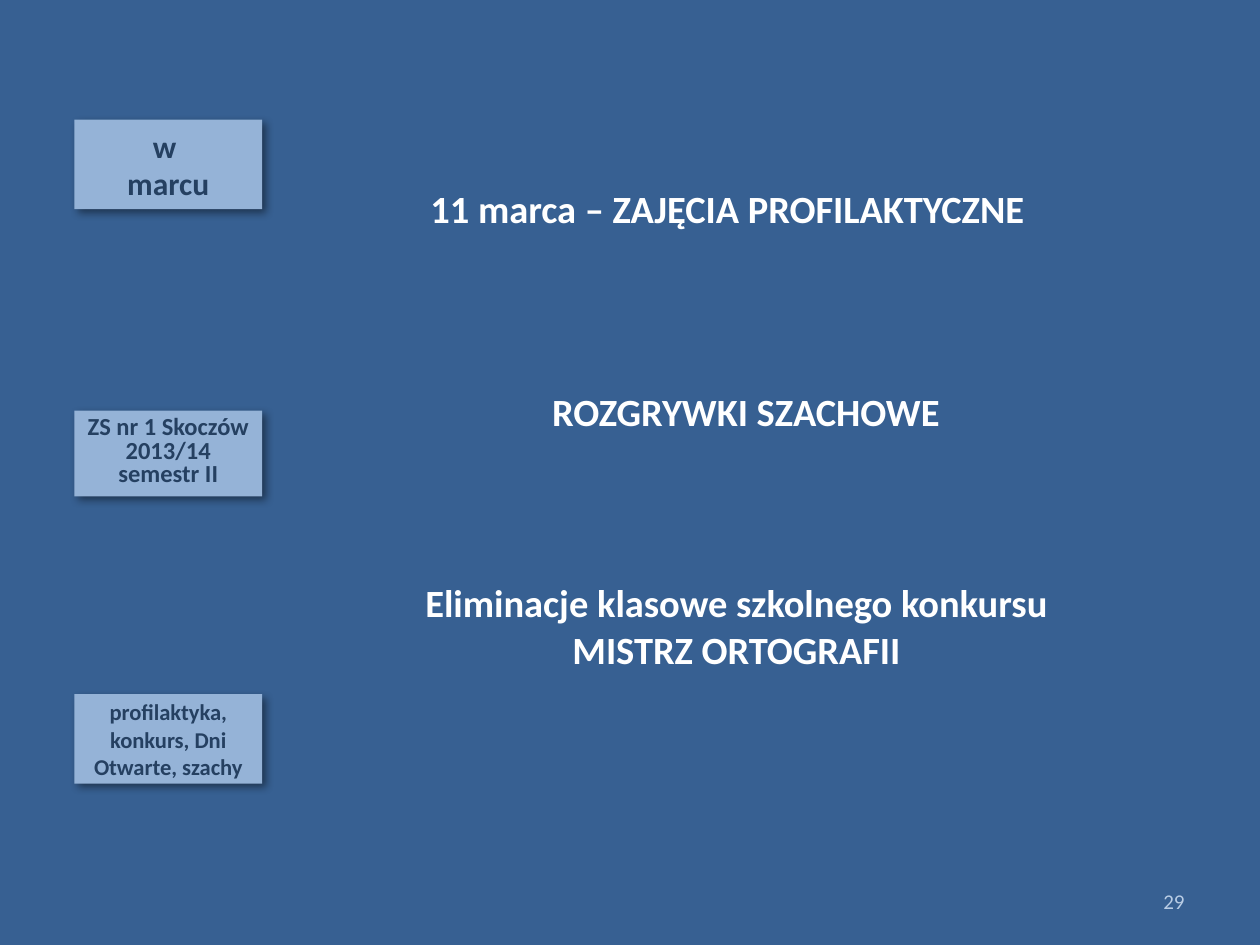
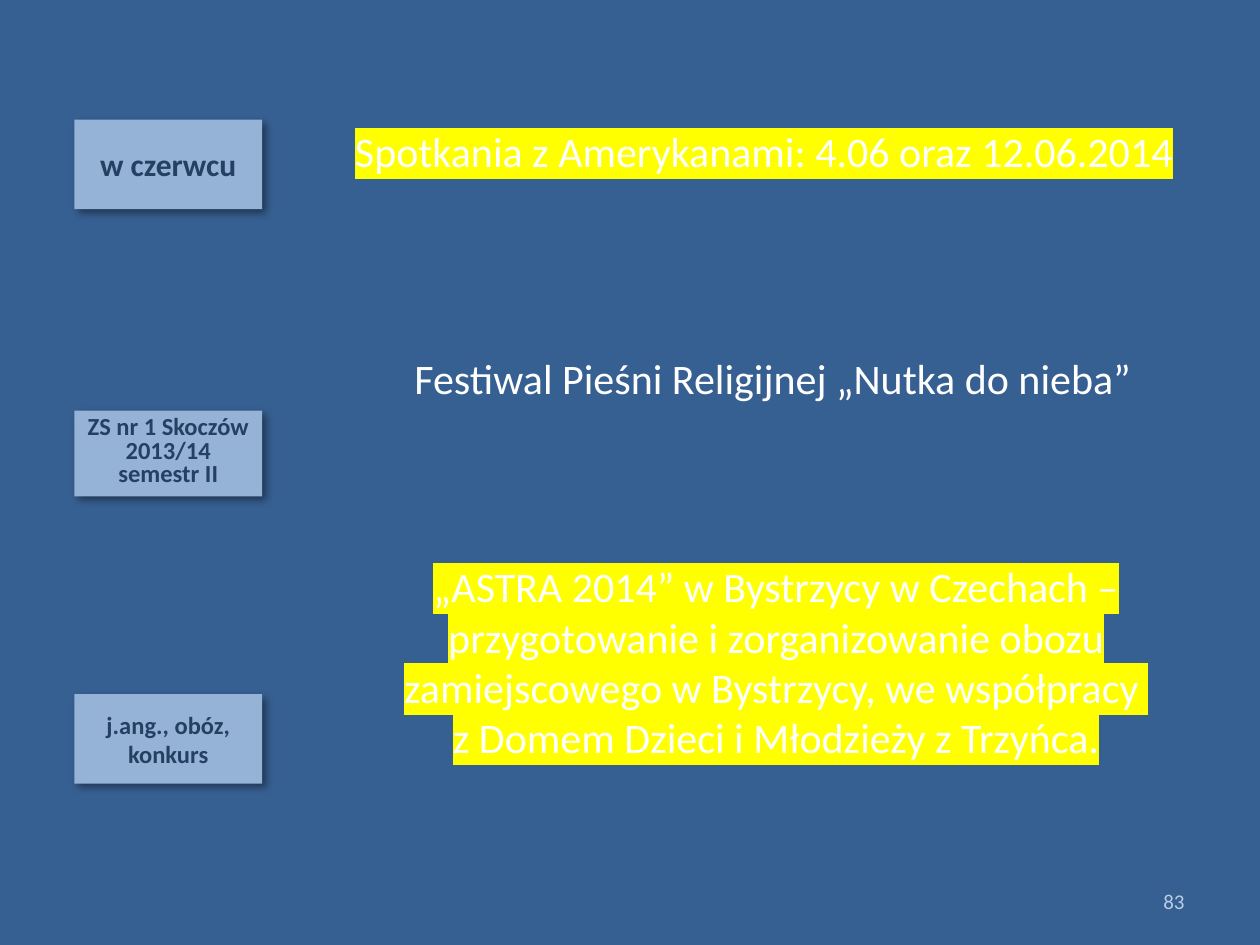
from lxml import etree
from pptx import Presentation
from pptx import util as u
from pptx.dml.color import RGBColor
from pptx.enum import shapes, text
from pptx.oxml import ns

Pt = u.Pt
NAVY = RGBColor(0x37, 0x60, 0x92)
SKY = RGBColor(0x95, 0xB3, 0xD7)
INK = RGBColor(0x25, 0x40, 0x61)
MIST = RGBColor(0xB9, 0xCD, 0xE5)
WHITE = RGBColor(0xFF, 0xFF, 0xFF)
GLOW = RGBColor(0xFF, 0xFF, 0x00)
FONT = "Calibri"
MID = text.MSO_ANCHOR.MIDDLE
TOP = text.MSO_ANCHOR.TOP

RAIL = (42.5, 68.4, 107.3, 379.4)
TAG = 51.1
SCHOOL = ["ZS nr 1 Skoczów 2013/14", "semestr II"]
FOOT = (516.2, 500.4, 167.8, 28.8)

MARCH = [
    ((210.2, 102.2, 411.1, 33.8), ["11 marca – ZAJĘCIA PROFILAKTYCZNE"], {}),
    ((215.3, 218.2, 421.9, 33.8), ["ROZGRYWKI SZACHOWE"], {}),
    ((215.3, 327.6, 411.1, 60.5),
     ["Eliminacje klasowe szkolnego konkursu", "MISTRZ ORTOGRAFII"], {}),
]
JUNE = [
    ((195.8, 68.4, 494.6, 36), ["Spotkania z Amerykanami: 4.06 oraz 12.06.2014"],
     {"align": "LEFT", "mark": GLOW}),
    ((182.2, 198, 524.2, 36), ["Festiwal Pieśni Religijnej „Nutka do nieba” "], {}),
    ((182.2, 316.8, 522.7, 123.8),
     ["„ASTRA 2014” w Bystrzycy w Czechach – przygotowanie i zorganizowanie "
      "obozu zamiejscowego w Bystrzycy, we współpracy ",
      "z Domem Dzieci i Młodzieży z Trzyńca."], {"mark": GLOW}),
]


def add(node, tag, **attrs):
    """Append a drawing element and return it."""
    return etree.SubElement(node, ns.qn("a:" + tag), attrs)


def write(shape, lines, size, color=WHITE, bold=False, align="CENTER",
          anchor=TOP, space=1.0, mark=None):
    """Fill a shape with formatted paragraphs."""
    frame = shape.text_frame
    frame.word_wrap = True
    frame.auto_size = text.MSO_AUTO_SIZE.NONE
    frame.vertical_anchor = anchor
    for i, line in enumerate(lines):
        para = frame.paragraphs[0] if i == 0 else frame.add_paragraph()
        para.alignment = text.PP_ALIGN[align]
        para.line_spacing = space
        run = para.add_run()
        run.text = line
        font = run.font
        font.size, font.bold = Pt(size), bold
        font.color.rgb = color
        if mark is not None:
            add(add(font._element, "highlight"), "srgbClr", val=str(mark))
        font.name = FONT


def place(shape, box):
    """Move a shape to a box given in points."""
    shape.left, shape.top, shape.width, shape.height = map(Pt, box)


def plate(shape, box):
    """Give a tag its place, fill and soft shadow."""
    place(shape, box)
    shape.fill.solid()
    shape.fill.fore_color.rgb = SKY
    shape.line.fill.background()
    shape.shadow.inherit = False
    glow = shape._element.spPr.find(ns.qn("a:effectLst"))
    cast = add(glow, "outerShdw", blurRad=str(Pt(5)), dist=str(Pt(3)),
               dir="2700000", algn="tl", rotWithShape="0")
    add(add(cast, "srgbClr", val="000000"), "alpha", val="43000")


def rail(slide, box, month, topic, size):
    """Place the month, school and topic tags down the left side."""
    left, top, width, height = box
    title = slide.shapes.title
    plate(title, (left, top, width, TAG))
    write(title, month, 18, INK, True, anchor=MID)
    rows = [
        (top + 166.3, 49, SCHOOL, {"size": 14, "space": 0.8}),
        (top + height - TAG, TAG, topic, {"size": size, "anchor": MID}),
    ]
    for y, tall, lines, style in rows:
        tag = slide.shapes.add_shape(shapes.MSO_SHAPE.RECTANGLE, 0, 0, 0, 0)
        plate(tag, (left, y, width, tall))
        write(tag, lines, color=INK, bold=True, **style)


def label(slide, box, lines, size, **style):
    """Add a plain text box."""
    write(slide.shapes.add_textbox(*map(Pt, box)), lines, size, **style)


def page(deck, month, topic, small, events, size, bold, number):
    """Build one month's slide."""
    slide = deck.slides.add_slide(deck.slide_layouts[5])
    slide.background.fill.solid()
    slide.background.fill.fore_color.rgb = NAVY
    rail(slide, RAIL, month, topic, small)
    for box, lines, style in events:
        label(slide, box, lines, size, bold=bold, **style)
    label(slide, FOOT, [number], 12, color=MIST, align="RIGHT", anchor=MID)


def main():
    """Build and save the deck."""
    deck = Presentation()
    deck.slide_width, deck.slide_height = Pt(720), Pt(540)
    page(deck, ["w ", "marcu"], ["profilaktyka, konkurs, Dni Otwarte, szachy"],
         12.9, MARCH, 22, True, "29")
    page(deck, ["w czerwcu"], ["j.ang., obóz, konkurs"], 14, JUNE, 24, False, "83")
    deck.save("out.pptx")


if __name__ == "__main__":
    main()
